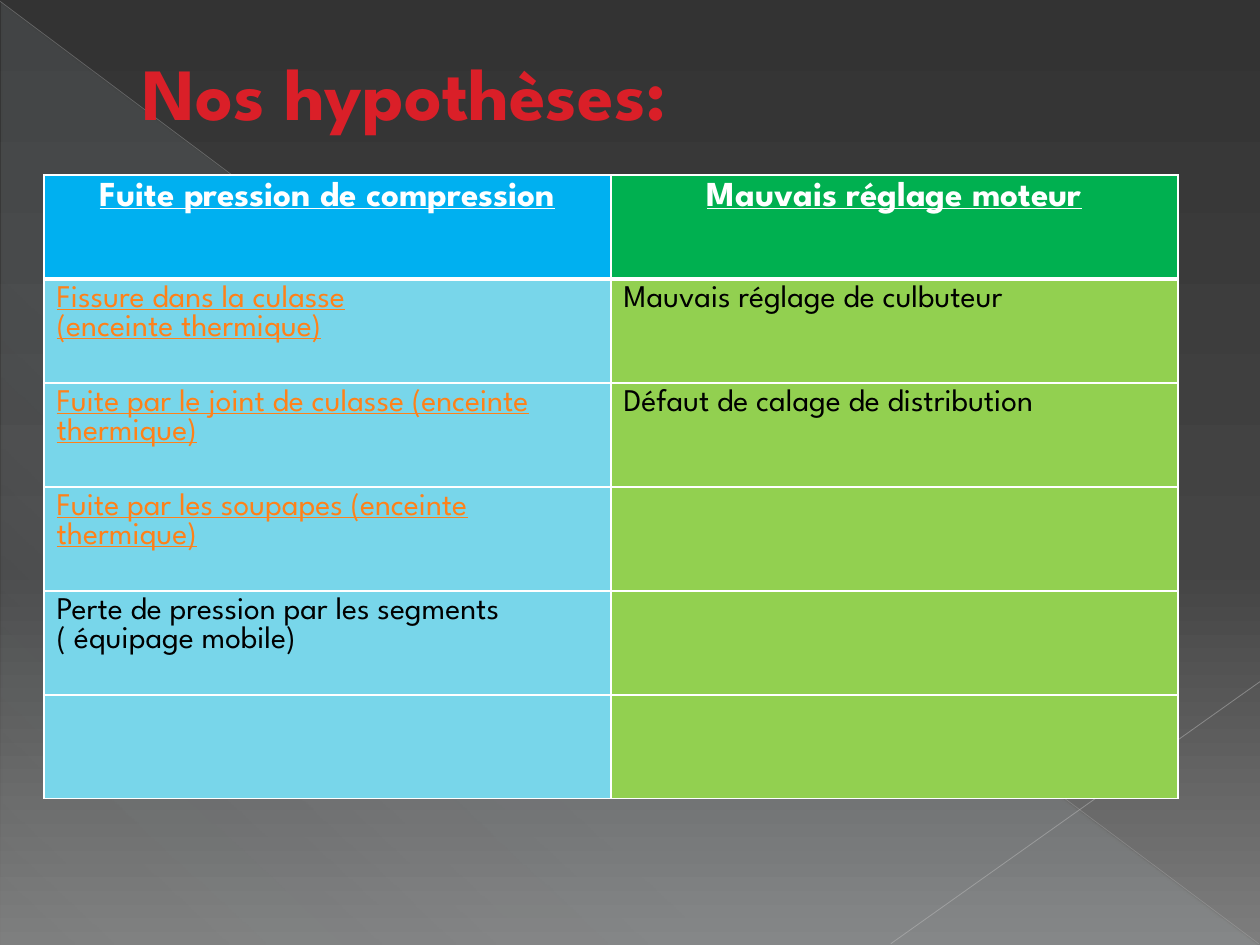
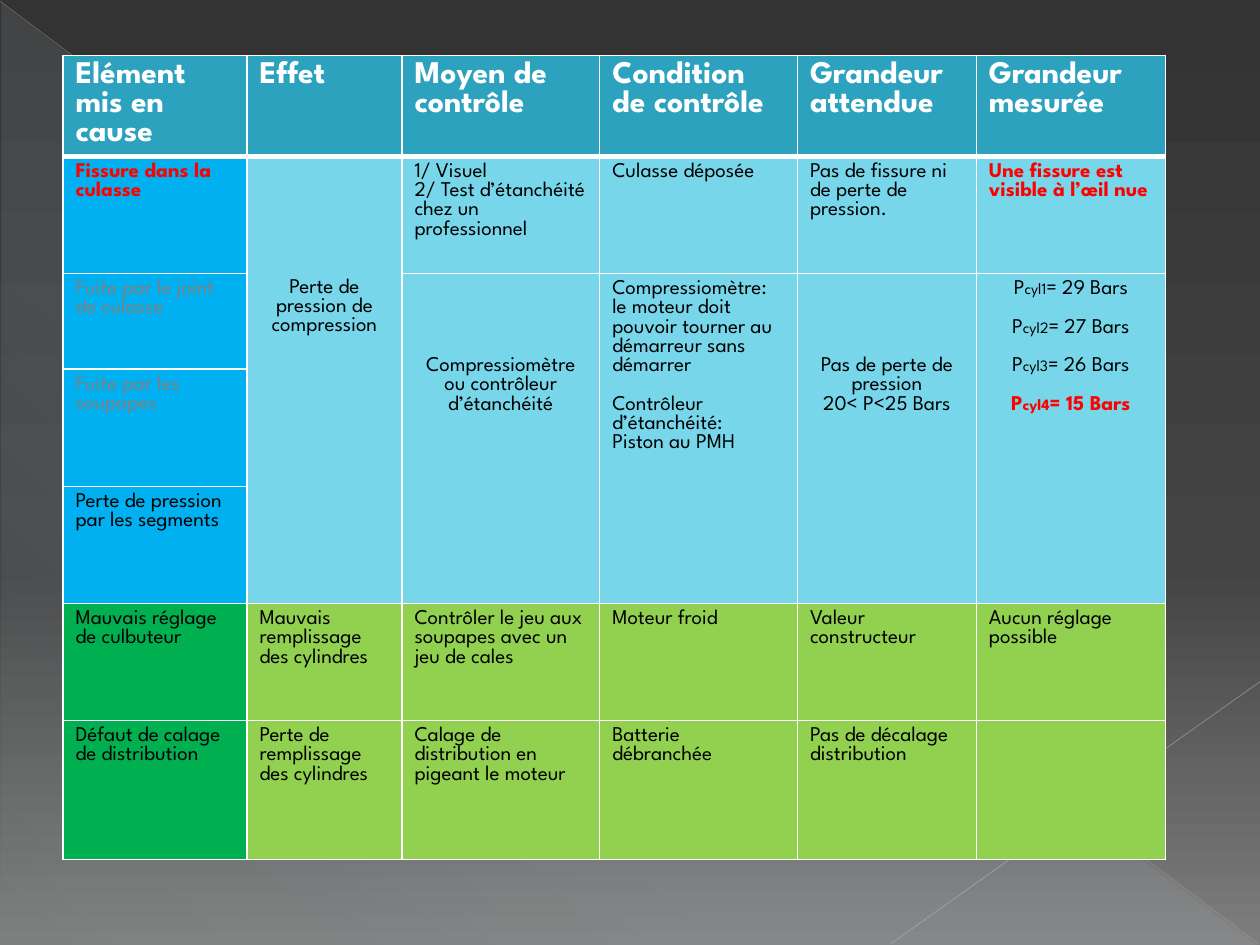
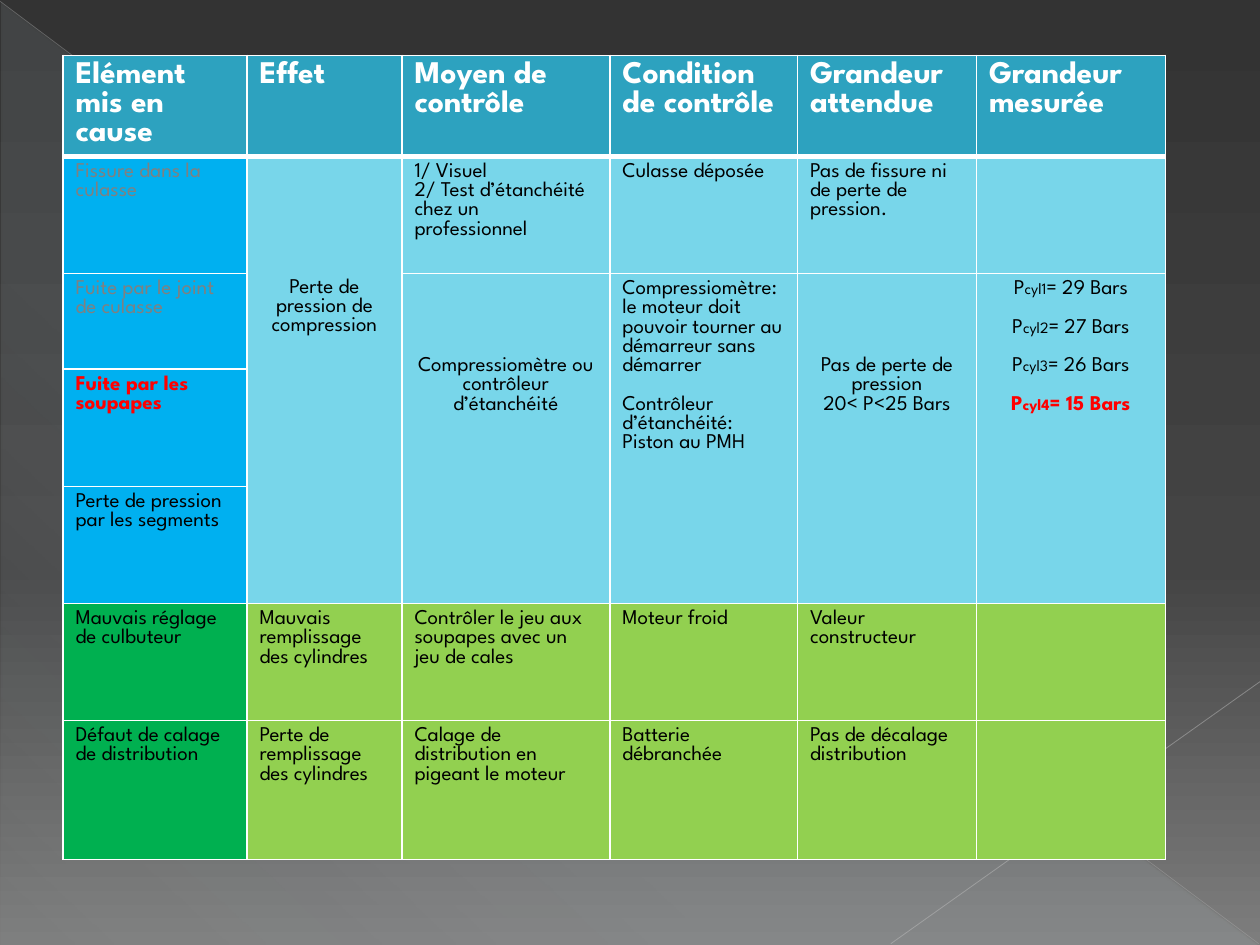
from lxml import etree
from pptx import Presentation
from pptx import util as u
from pptx.dml.color import RGBColor
from pptx.enum import shapes, text
from pptx.oxml import ns

COLORS = {
    "white": "FFFFFF", "black": "000000", "grey": "808080", "red": "FF0000",
    "title": "DA1F28", "title outline": "1F7084", "orange": "FF8119",
    "header": "2DA2BF", "blue": "00B0F0", "light blue": "78D6EA",
    "green": "00B050", "light green": "92D050",
    "glow": "DEF5FA", "diagonal": "B9B9B9", "corner": "C1C1C1",
    "top": "333333", "middle": "444444", "bottom": "7D7D7D",
}
FONT = "League Spartan"
LINE_HEIGHT = 0.92
WIDTH, HEIGHT = 10, 7.5


def set_gradient(element, angle, stops):
    """Give the first gradient in element these (position, colour, opacity) stops, in percent."""
    gradient = next(element.iter(ns.qn("a:gradFill")))
    stop_list = gradient.find(ns.qn("a:gsLst"))
    for stop in list(stop_list):
        stop_list.remove(stop)
    for position, color, opacity in stops:
        stop = etree.SubElement(stop_list, ns.qn("a:gs"), pos=str(position * 1000))
        shade = etree.SubElement(stop, ns.qn("a:srgbClr"), val=COLORS[color])
        etree.SubElement(shade, ns.qn("a:alpha"), val=str(opacity * 1000))
    gradient.find(ns.qn("a:lin")).set("ang", str(angle * 60000))


def add_grid(slide, left, top, columns, rows, contents, fill_of, style_of):
    """Add a white-ruled table; a blank line in a cell's text becomes spacing, | sets off small text."""
    table = slide.shapes.add_table(
        len(rows), len(columns), u.Inches(left), u.Inches(top),
        u.Inches(sum(columns)), u.Inches(sum(rows))).table
    for column, width in zip(table.columns, columns):
        column.width = u.Inches(width)
    for row, height in zip(table.rows, rows):
        row.height = u.Inches(height)
    for r in range(len(rows)):
        for c in range(len(columns)):
            cell = table.cell(r, c)
            properties = cell._tc.get_or_add_tcPr()
            for side in ("L", "R", "T", "B"):
                thick = (r, side) in ((0, "B"), (1, "T"))
                border = etree.SubElement(properties, ns.qn("a:ln" + side),
                                          w=str(u.Pt(3 if thick else 1)))
                paint = etree.SubElement(border, ns.qn("a:solidFill"))
                etree.SubElement(paint, ns.qn("a:srgbClr"), val=COLORS["white"])
            cell.fill.solid()
            cell.fill.fore_color.rgb = RGBColor.from_string(COLORS[fill_of(r, c)])
            words = contents.get((r, c))
            if not words:
                continue
            frame = cell.text_frame
            paragraph, gap = frame.paragraphs[0], False
            for number, line in enumerate(words.split("\n")):
                if not line:
                    gap = True
                    continue
                if number:
                    paragraph = frame.add_paragraph()
                size, color, bold, underline, align = style_of(r, c, line)
                if gap:
                    paragraph.space_before = u.Pt(size * LINE_HEIGHT)
                gap = False
                paragraph.alignment = align
                font = paragraph.font
                font.name, font.size, font.bold, font.underline = FONT, u.Pt(size), bold, underline
                font.color.rgb = RGBColor.from_string(COLORS[color])
                for part, piece in enumerate(line.split("|")):
                    run = paragraph.add_run()
                    run.text = piece
                    if part == 1:
                        run.font.size = u.Pt(9)
    return table


presentation = Presentation()
presentation.slide_width, presentation.slide_height = u.Inches(WIDTH), u.Inches(HEIGHT)
master = presentation.slide_master
master.background.fill.gradient()
set_gradient(master.element, 90, [(0, "top", 100), (60, "middle", 100), (100, "bottom", 100)])

# Shared backdrop
slides = []
for _ in range(3):
    slide = presentation.slides.add_slide(presentation.slide_layouts[6])
    slides.append(slide)
    triangle = slide.shapes.add_shape(
        shapes.MSO_SHAPE.RIGHT_TRIANGLE, u.Inches(0.01), u.Inches(0.02),
        u.Inches(WIDTH - 0.02), u.Inches(HEIGHT - 0.02))
    triangle.shadow.inherit = False
    triangle.line.fill.background()
    triangle.fill.gradient()
    set_gradient(triangle._element, 133, [(0, "glow", 10), (70, "glow", 8), (100, "glow", 1)])
    for start, end, color, weight, opacity in [
            ((0, 0.01), (9.99, 7.49), "diagonal", 0.39, 35),
            ((10, 5.41), (7.07, 7.49), "corner", 0.47, 45)]:
        line = slide.shapes.add_connector(
            shapes.MSO_CONNECTOR.STRAIGHT, *map(u.Inches, start + end))
        line.line.width = u.Pt(weight)
        line.line.color.rgb = RGBColor.from_string(COLORS[color])
        shade = next(line._element.spPr.iter(ns.qn("a:srgbClr")))
        etree.SubElement(shade, ns.qn("a:alpha"), val=str(opacity * 1000))
        etree.SubElement(line._element.spPr, ns.qn("a:effectLst"))

# Slide 1: hypotheses
box = slides[0].shapes.add_textbox(u.Inches(0.5), u.Inches(0.29), u.Inches(9), u.Inches(0.86))
box.text_frame.word_wrap = True
box.text_frame.vertical_anchor = text.MSO_ANCHOR.MIDDLE
box.text_frame.margin_left = u.Inches(0.63)
paragraph = box.text_frame.paragraphs[0]
run = paragraph.add_run()
run.text = "Nos hypothèses:"
font = run.font
font.name, font.size, font.bold = FONT, u.Pt(42), True
font.color.rgb = RGBColor.from_string(COLORS["title"])
outline = etree.Element(ns.qn("a:ln"), w=str(u.Pt(0.5)))
paint = etree.SubElement(outline, ns.qn("a:solidFill"))
etree.SubElement(paint, ns.qn("a:srgbClr"), val=COLORS["title outline"])
run._r.get_or_add_rPr().insert(0, outline)

hypotheses = [
    ["Fuite pression de compression", "Mauvais réglage moteur"],
    ["Fissure dans la culasse\n(enceinte thermique)", "Mauvais réglage de culbuteur"],
    ["Fuite par le joint de culasse (enceinte thermique)", "Défaut de calage de distribution"],
    ["Fuite par les soupapes (enceinte thermique)", ""],
    ["Perte de pression par les segments ( équipage mobile)", ""],
    ["", ""],
]
add_grid(
    slides[0], 0.35, 1.39, [4.5] * 2, [0.825] * 6,
    {(r, c): words for r, row in enumerate(hypotheses) for c, words in enumerate(row)},
    lambda r, c: ("light " if r else "") + ("blue", "green")[c],
    lambda r, c, line:
        (20, "white", True, True, text.PP_ALIGN.CENTER) if r == 0 else
        (18, "orange", False, True, text.PP_ALIGN.LEFT) if c == 0 and r <= 3 else
        (18, "black", False, False, text.PP_ALIGN.LEFT))

# Slides 2 and 3: checks
checks = [
    ["Elément mis en cause", "Effet", "Moyen de contrôle", "Condition de contrôle",
     "Grandeur attendue", "Grandeur mesurée"],
    ["Fissure dans la culasse", "Perte de pression de compression",
     "1/ Visuel\n2/ Test d’étanchéité chez un professionnel", "Culasse déposée",
     "Pas de fissure ni de perte de pression."],
    ["Fuite par le joint de culasse", "", "Compressiomètre ou contrôleur d’étanchéité",
     "Compressiomètre: le moteur doit pouvoir tourner au démarreur sans démarrer\n\n"
     "Contrôleur d’étanchéité:\nPiston au PMH",
     "Pas de perte de pression\n20< P<25 Bars",
     "\n\n".join(f"P|cyl{number}|= {bars} Bars"
                 for number, bars in enumerate([29, 27, 26, 15], 1))],
    ["Fuite par les soupapes"],
    ["Perte de pression par les segments"],
    ["Mauvais réglage de culbuteur", "Mauvais remplissage des cylindres",
     "Contrôler le jeu aux soupapes avec un jeu de cales", "Moteur froid", "Valeur constructeur"],
    ["Défaut de calage de distribution", "Perte de remplissage des cylindres",
     "Calage de distribution en pigeant le moteur", "Batterie débranchée",
     "Pas de décalage distribution"],
]
check_texts = {(r, c): words for r, row in enumerate(checks) for c, words in enumerate(row)}
centred_cells = [(1, 1), (2, 2), (2, 4), (2, 5)]


def check_fill(r, c):
    if r == 0:
        return "header"
    return ("light " if c else "") + ("blue" if r <= 4 else "green")


for slide, middle_columns, confirmed, ruled_out, measured in [
        (slides[1], [1.57, 1.57], 1, (2, 3),
         {(1, 5): "Une fissure est visible à l’œil nue", (5, 5): "Aucun réglage possible"}),
        (slides[2], [1.65, 1.49], 3, (1, 2), {})]:

    def check_style(r, c, line):
        align = text.PP_ALIGN.CENTER if (r, c) in centred_cells else text.PP_ALIGN.LEFT
        if r == 0:
            return 18, "white", True, False, align
        if (r, c) in [(confirmed, 0), (1, 5)] or "cyl4" in line:
            return 12, "red", True, False, align
        return 12, "grey" if c == 0 and r in ruled_out else "black", False, False, align

    table = add_grid(
        slide, 0.5, 0.44, [1.46, 1.23, *middle_columns, 1.42, 1.5],
        [0.8, 0.93, 0.76, 0.93, 0.93, 0.93, 1.1], check_texts | measured, check_fill, check_style)
    for first_row, column, blank_lines in [(1, 1, 6), (2, 2, 4), (2, 3, 0), (2, 4, 4), (2, 5, 0)]:
        cell = table.cell(first_row, column)
        cell.merge(table.cell(4, column))
        cell.margin_top = u.Inches(0.05) + u.Pt(12 * LINE_HEIGHT * blank_lines)

presentation.save("out.pptx")
